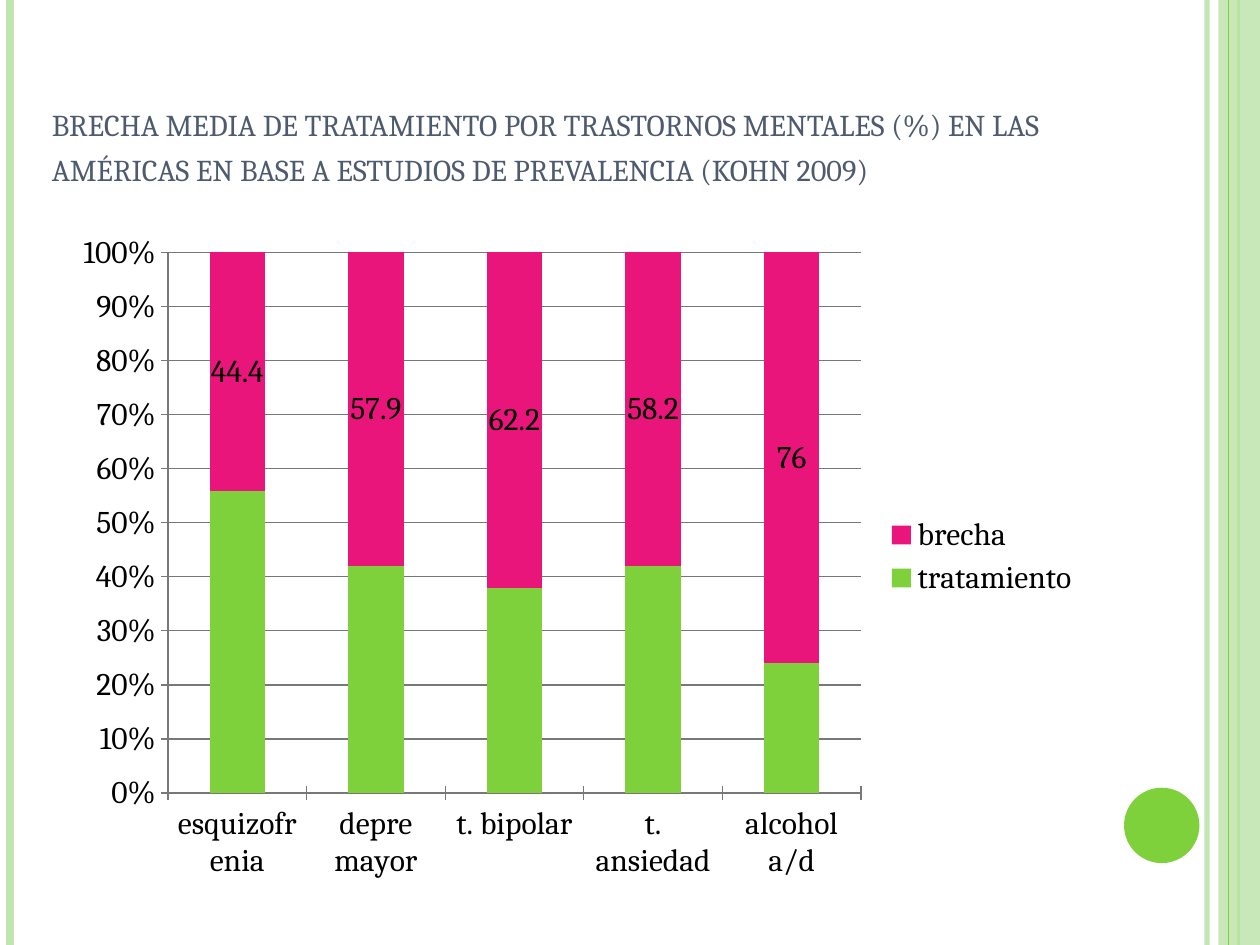
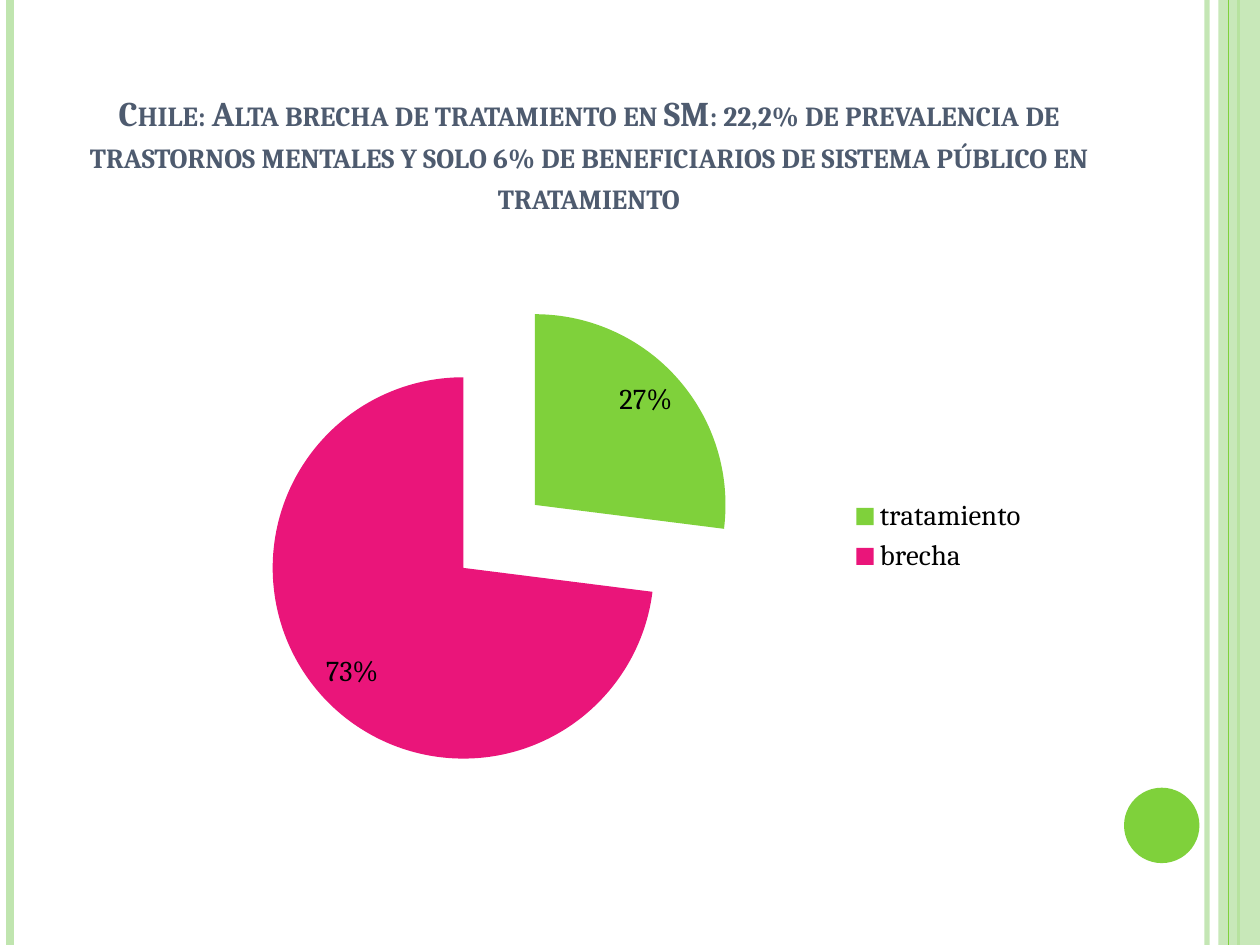
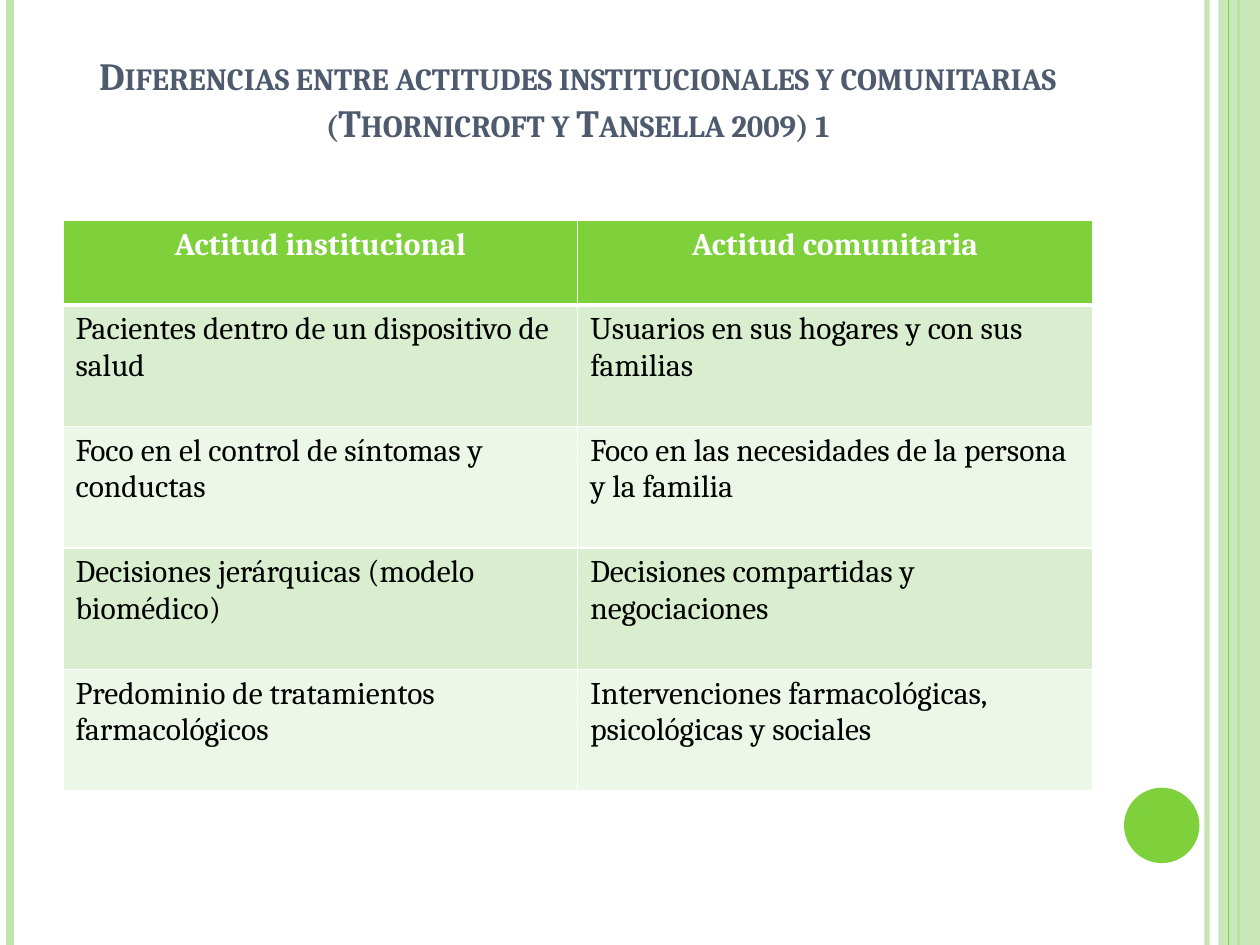
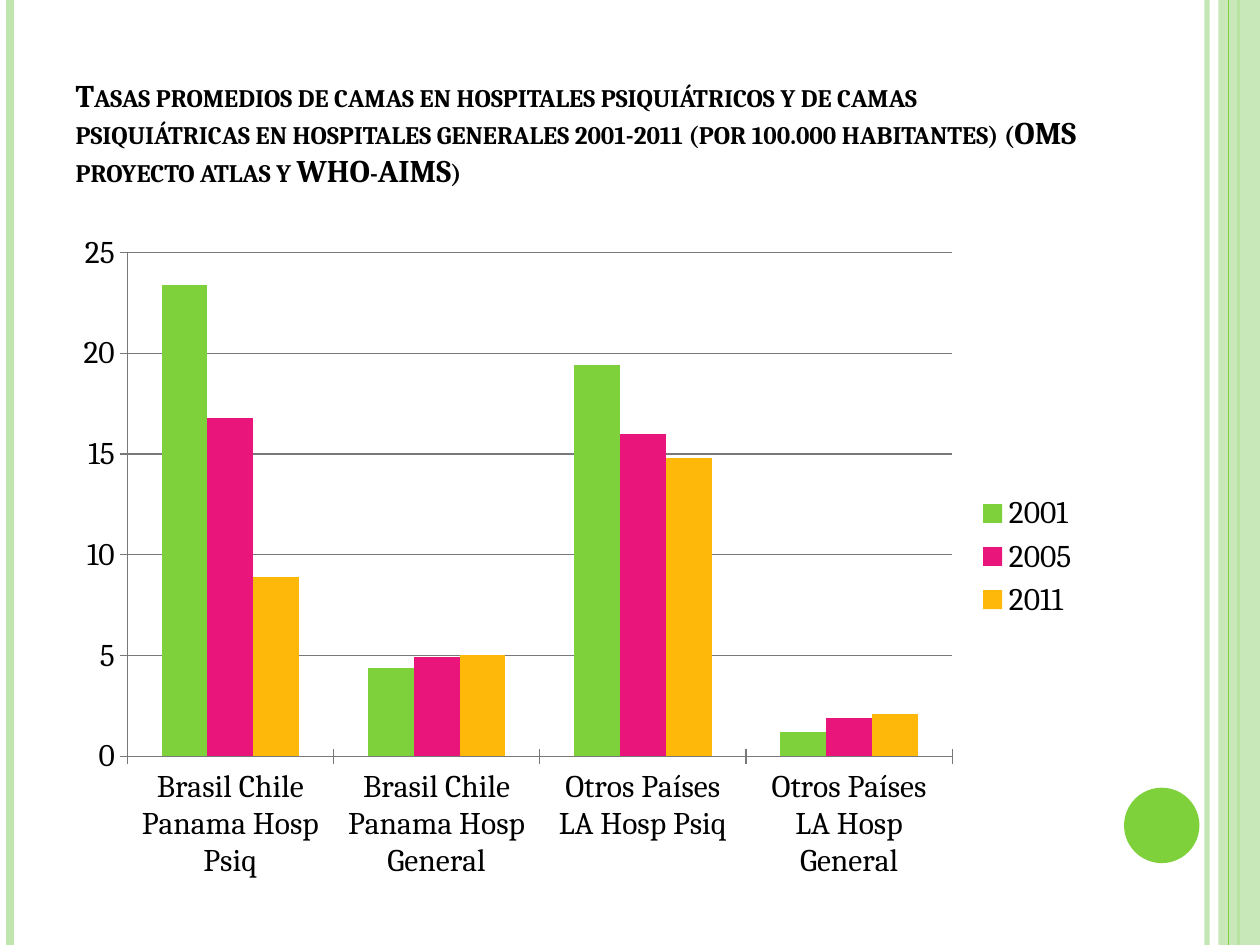
"""Four slides on mental health treatment gaps, with charts and a table."""
from lxml import etree
from pptx import Presentation
from pptx.chart.data import CategoryChartData
from pptx.dml.color import RGBColor
from pptx.enum import chart as kinds, shapes, text
from pptx.oxml.ns import qn
from pptx.util import Cm, Pt

FONT = "Cambria"
GREEN, PINK, AMBER = "7FD13B", "EA157A", "FEB80A"
PALE_GREEN, ROW_DARK, ROW_LIGHT = "C0E5AF", "D8EECE", "ECF7E8"
SLATE, BLACK, WHITE, GRAY = "4E5B6F", "000000", "FFFFFF", "787878"
WIDTH, HEIGHT = 25.4, 19.05
TITLE_BOX = (1.27, 0.76, 20.75, 3.18)
CHART_BOX = (1.27, 4.45, 20.75, 13.54)
LEFT, CENTER = text.PP_ALIGN.LEFT, text.PP_ALIGN.CENTER


def color(value):
    return RGBColor.from_string(value)


def paint(fill, value):
    fill.solid()
    fill.fore_color.rgb = color(value)


def fade(shape, opacity):
    tone = shape.element.xpath(".//p:spPr//a:srgbClr")[0]
    etree.SubElement(tone, qn("a:alpha"), val=str(opacity * 1000))


def style_font(font, size, tone=BLACK, bold=False):
    font.name = FONT
    font.size = Pt(size)
    font.bold = bold
    font.color.rgb = color(tone)


def write(frame, words, size=18, tone=BLACK, bold=False, align=LEFT, small_caps=False):
    para = frame.paragraphs[0]
    para.alignment = align
    span = para.add_run()
    span.text = words
    style_font(span.font, size, tone, bold)
    if small_caps:
        span.font._element.set("cap", "small")


def add_stripe(page, x, tone, width):
    stripe = page.shapes.add_connector(
        shapes.MSO_CONNECTOR.STRAIGHT, Cm(x), 0, Cm(x), Cm(HEIGHT))
    stripe.line.color.rgb = color(tone)
    stripe.line.width = Pt(width)
    etree.SubElement(stripe.element.spPr, qn("a:effectLst"))
    return stripe


def add_block(page, kind, at, tone):
    block = page.shapes.add_shape(kind, *map(Cm, at))
    block.shadow.inherit = False
    paint(block.fill, tone)
    block.line.fill.background()
    return block


def decorate_layout(layout, page):
    """Draw the side bands on a page and move them to its layout."""
    for holder in list(layout.placeholders):
        if holder.placeholder_format.idx:
            layout.shapes.element.remove(holder.element)
    rail = add_stripe(page, 24.33, PALE_GREEN, 3)
    fade(rail, 93)
    edge = add_stripe(page, 0.2, PALE_GREEN, 4.5)
    middle = add_stripe(page, 24.97, GREEN, 1.5)
    band = add_block(page, shapes.MSO_SHAPE.RECTANGLE, (24.56, 0, 0.84, HEIGHT), PALE_GREEN)
    fade(band, 87)
    thin = add_stripe(page, 24.77, GREEN, 0.75)
    disc = add_block(page, shapes.MSO_SHAPE.OVAL, (22.66, 15.88, 1.52, 1.52), GREEN)
    for part in (rail, edge, middle, band, thin, disc):
        layout.shapes.element.append(part.element)


def set_title(page, words, at=TITLE_BOX, bottom=0.13, **style):
    title = page.shapes.title
    title.left, title.top, title.width, title.height = map(Cm, at)
    frame = title.text_frame
    frame.word_wrap = True
    frame.auto_size = text.MSO_AUTO_SIZE.NONE
    frame.vertical_anchor = text.MSO_ANCHOR.BOTTOM
    frame.margin_bottom = Cm(bottom)
    write(frame, words, small_caps=True, **style)


def add_chart(page, kind, at, categories, series, size=18):
    data = CategoryChartData()
    data.categories = categories
    for name, values in series:
        data.add_series(name, values)
    chart = page.shapes.add_chart(kind, *map(Cm, at), data).chart
    chart.has_title = False
    style_font(chart.font, size)
    chart.has_legend = True
    chart.legend.position = kinds.XL_LEGEND_POSITION.RIGHT
    chart.legend.include_in_layout = False
    style_font(chart.legend.font, size)
    return chart


def add_columns(page, kind, categories, series, tones, top, step, number_format):
    chart = add_chart(page, kind, CHART_BOX, categories, series)
    plot = chart.plots[0]
    plot.vary_by_categories = False
    plot.gap_width = 150
    for bars, tone in zip(plot.series, tones):
        paint(bars.format.fill, tone)
    for axis in (chart.category_axis, chart.value_axis):
        axis.major_tick_mark = kinds.XL_TICK_MARK.CROSS
        axis.format.line.color.rgb = color(GRAY)
    scale = chart.value_axis
    scale.minimum_scale, scale.maximum_scale, scale.major_unit = 0, top, step
    scale.tick_labels.number_format = number_format
    scale.tick_labels.number_format_is_linked = False
    scale.has_major_gridlines = True
    scale.major_gridlines.format.line.color.rgb = color(GRAY)
    return plot


def add_pie(page, at, categories, values, tones, size):
    chart = add_chart(page, kinds.XL_CHART_TYPE.PIE, at, categories, [("Series 1", values)], size)
    plot = chart.plots[0]
    plot.vary_by_categories = True
    slices = plot.series[0]
    explosion = etree.Element(qn("c:explosion"), val="25")
    slices._element.find(qn("c:tx")).addnext(explosion)
    for index, tone in enumerate(tones):
        paint(slices.points[index].format.fill, tone)
    labels = slices.data_labels
    labels.show_value = False
    labels.show_percentage = True
    labels.number_format = "0%"
    labels.number_format_is_linked = False
    labels.position = kinds.XL_LABEL_POSITION.INSIDE_END
    style_font(labels.font, size)


def set_borders(cell, bottom):
    properties = cell._tc.get_or_add_tcPr()
    for side, width in (("L", 1), ("R", 1), ("T", 1), ("B", bottom)):
        line = etree.SubElement(properties, qn(f"a:ln{side}"), w=str(Pt(width)))
        fill = etree.SubElement(line, qn("a:solidFill"))
        etree.SubElement(fill, qn("a:srgbClr"), val=WHITE)


def add_grid(page, at, rows, head_height, row_height):
    table = page.shapes.add_table(len(rows), len(rows[0]), *map(Cm, at)).table
    for r, entries in enumerate(rows):
        head = r == 0
        table.rows[r].height = Cm(head_height if head else row_height)
        tone = GREEN if head else (ROW_DARK if r % 2 else ROW_LIGHT)
        for c, words in enumerate(entries):
            cell = table.cell(r, c)
            set_borders(cell, 3 if head else 1)
            paint(cell.fill, tone)
            write(cell.text_frame, words, tone=WHITE if head else BLACK,
                  bold=head, align=CENTER if head else LEFT)


def build_gap_by_disorder(page):
    set_title(page, "brecha media de tratamiento por trastornos mentales (%) en las américas "
              "en base a estudios de prevalencia (kohn 2009)",
              at=(0.79, 0.76, 21.64, 3.18), size=21.6, tone=SLATE)
    plot = add_columns(
        page, kinds.XL_CHART_TYPE.COLUMN_STACKED_100,
        ["esquizofrenia", "depre mayor", "t. bipolar", "t. ansiedad", "alcohol a/d"],
        [("tratamiento", (56, 42, 38, 42, 24)), ("brecha", (44.4, 57.9, 62.2, 58.2, 76))],
        (GREEN, PINK), top=1, step=0.1, number_format="0%")
    plot.overlap = 100
    labels = plot.series[1].data_labels
    labels.show_value = True
    style_font(labels.font, 18)


def build_gap_in_chile(page):
    set_title(page, "Chile: Alta brecha de tratamiento en SM: 22,2% de prevalencia de trastornos "
              "mentales y solo 6% de beneficiarios de sistema público en tratamiento",
              at=(1.5, 1.32, 20.75, 3.18), size=19.8, tone=SLATE, bold=True, align=CENTER)
    add_pie(page, (3.05, 5.66, 17.93, 10.31), ["tratamiento", "brecha"], (27, 73),
            (GREEN, PINK), size=16.4)


def build_attitudes(page):
    set_title(page, "Diferencias entre actitudes institucionales y comunitarias "
              "(Thornicroft y Tansella 2009) 1",
              bottom=1.02, size=22, tone=SLATE, bold=True, align=CENTER)
    rows = [
        ("Actitud institucional", "Actitud comunitaria"),
        ("Pacientes dentro de un dispositivo de salud",
         "Usuarios en sus hogares y con sus familias"),
        ("Foco en el control de síntomas y conductas",
         "Foco en las necesidades de la persona y la familia"),
        ("Decisiones jerárquicas (modelo biomédico)",
         "Decisiones compartidas y negociaciones"),
        ("Predominio de tratamientos farmacológicos",
         "Intervenciones farmacológicas, psicológicas y sociales"),
    ]
    add_grid(page, (1.27, 4.45, 20.75, 11.52), rows, head_height=1.7, row_height=2.45)


def build_bed_rates(page):
    set_title(page, "Tasas promedios de camas en hospitales psiquiátricos y de camas psiquiátricas "
              "en hospitales generales 2001-2011 (por 100.000 habitantes) "
              "(OMS proyecto atlas y WHO-AIMS)", size=18, bold=True)
    add_columns(
        page, kinds.XL_CHART_TYPE.COLUMN_CLUSTERED,
        ["Brasil Chile Panama Hosp Psiq", "Brasil Chile Panama Hosp General",
         "Otros Países LA Hosp Psiq", "Otros Países LA Hosp General"],
        [("2001", (23.4, 4.4, 19.4, 1.2)), ("2005", (16.8, 4.9, 16, 1.9)),
         ("2011", (8.9, 5, 14.8, 2.1))],
        (GREEN, PINK, AMBER), top=25, step=5, number_format="General")


def main():
    deck = Presentation()
    deck.slide_width, deck.slide_height = Cm(WIDTH), Cm(HEIGHT)
    layout = deck.slide_layouts[5]
    builders = (build_gap_by_disorder, build_gap_in_chile, build_attitudes, build_bed_rates)
    pages = [deck.slides.add_slide(layout) for _ in builders]
    decorate_layout(layout, pages[0])
    for build, page in zip(builders, pages):
        build(page)
    deck.save("out.pptx")


if __name__ == "__main__":
    main()
